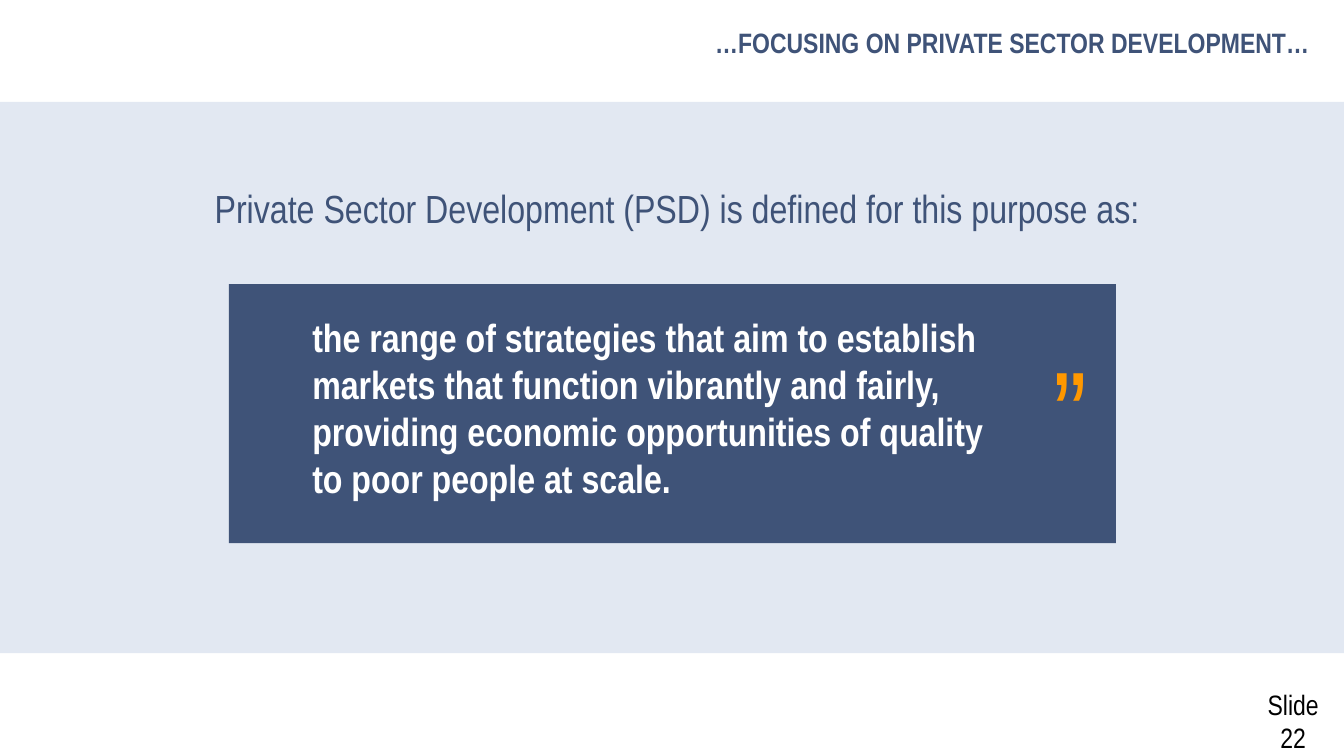
from dataclasses import dataclass

from lxml import etree
from pptx import Presentation
from pptx import util as u
from pptx.dml.color import RGBColor
from pptx.enum import shapes, text
from pptx.oxml import ns

FONT = "Arial Narrow"
NAVY = RGBColor(0x3F, 0x53, 0x78)
PALE_BLUE = RGBColor(0xC7, 0xD3, 0xE6)
ORANGE = RGBColor(0xFF, 0x98, 0x00)
WHITE = RGBColor(0xFF, 0xFF, 0xFF)
BLACK = RGBColor(0x00, 0x00, 0x00)


@dataclass(frozen=True)
class Box:
    """Place and size in centimetres."""
    left: float
    top: float
    width: float
    height: float


@dataclass(frozen=True)
class Label:
    box: Box
    words: str
    size: int
    color: RGBColor
    bold: bool = False
    align: text.PP_ALIGN = text.PP_ALIGN.LEFT
    indent: float = 0
    inset: float = 0.13


TITLE = Label(Box(12.19, 0.51, 21.06, 1.12), "…FOCUSING ON PRIVATE SECTOR DEVELOPMENT…",
              20, NAVY, bold=True, align=text.PP_ALIGN.RIGHT)
LABELS = [
    Label(Box(5.16, 4.52, 24.05, 1.45),
          "Private Sector Development (PSD) is defined for this purpose as:", 28, NAVY),
    Label(Box(6.35, 7.77, 19.56, 5.05),
          "the range of strategies that aim to establish markets that function vibrantly "
          "and fairly, providing economic opportunities of quality to poor people at scale.",
          28, WHITE, bold=True, indent=1.27),
    Label(Box(26.31, 8.33, 1.57, 4.01), "”", 88, ORANGE),
    Label(Box(31.32, 17.07, 2.54, 2.03), "Slide 22", 20, BLACK,
          align=text.PP_ALIGN.CENTER, inset=0.25),
]


def place(shape, box: Box) -> None:
    shape.left, shape.top = u.Cm(box.left), u.Cm(box.top)
    shape.width, shape.height = u.Cm(box.width), u.Cm(box.height)


def write(shape, label: Label) -> None:
    place(shape, label.box)
    frame = shape.text_frame
    frame.word_wrap = True
    frame.auto_size = text.MSO_AUTO_SIZE.NONE
    frame.vertical_anchor = text.MSO_ANCHOR.TOP
    frame.margin_left = frame.margin_right = u.Cm(0.25)
    frame.margin_top = frame.margin_bottom = u.Cm(label.inset)
    paragraph = frame.paragraphs[0]
    paragraph.alignment = label.align
    if label.indent:
        paragraph._p.get_or_add_pPr().set("marL", str(u.Cm(label.indent)))
    run = paragraph.add_run()
    run.text = label.words
    run.font.name = FONT
    run.font.size = u.Pt(label.size)
    run.font.bold = label.bold
    run.font.color.rgb = label.color


def add_panel(slide, box: Box, color: RGBColor, opacity: int = 100) -> None:
    """Add a plain rectangle; opacity is a percentage."""
    shape = slide.shapes.add_shape(shapes.MSO_SHAPE.RECTANGLE, 0, 0, 0, 0)
    place(shape, box)
    shape.shadow.inherit = False
    shape.line.fill.background()
    shape.fill.solid()
    shape.fill.fore_color.rgb = color
    if opacity < 100:
        fill_color = shape._element.spPr.find(".//" + ns.qn("a:srgbClr"))
        etree.SubElement(fill_color, ns.qn("a:alpha")).set("val", str(opacity * 1000))


def main() -> None:
    presentation = Presentation()
    presentation.slide_width = u.Cm(33.87)
    presentation.slide_height = u.Cm(19.05)
    slide = presentation.slides.add_slide(presentation.slide_layouts.get_by_name("Title Only"))
    write(slide.shapes.title, TITLE)
    add_panel(slide, Box(0, 2.57, 33.87, 13.89), PALE_BLUE, opacity=50)
    add_panel(slide, Box(5.77, 7.16, 22.35, 6.53), NAVY)
    for label in LABELS:
        write(slide.shapes.add_textbox(0, 0, 0, 0), label)
    presentation.save("out.pptx")


if __name__ == "__main__":
    main()
